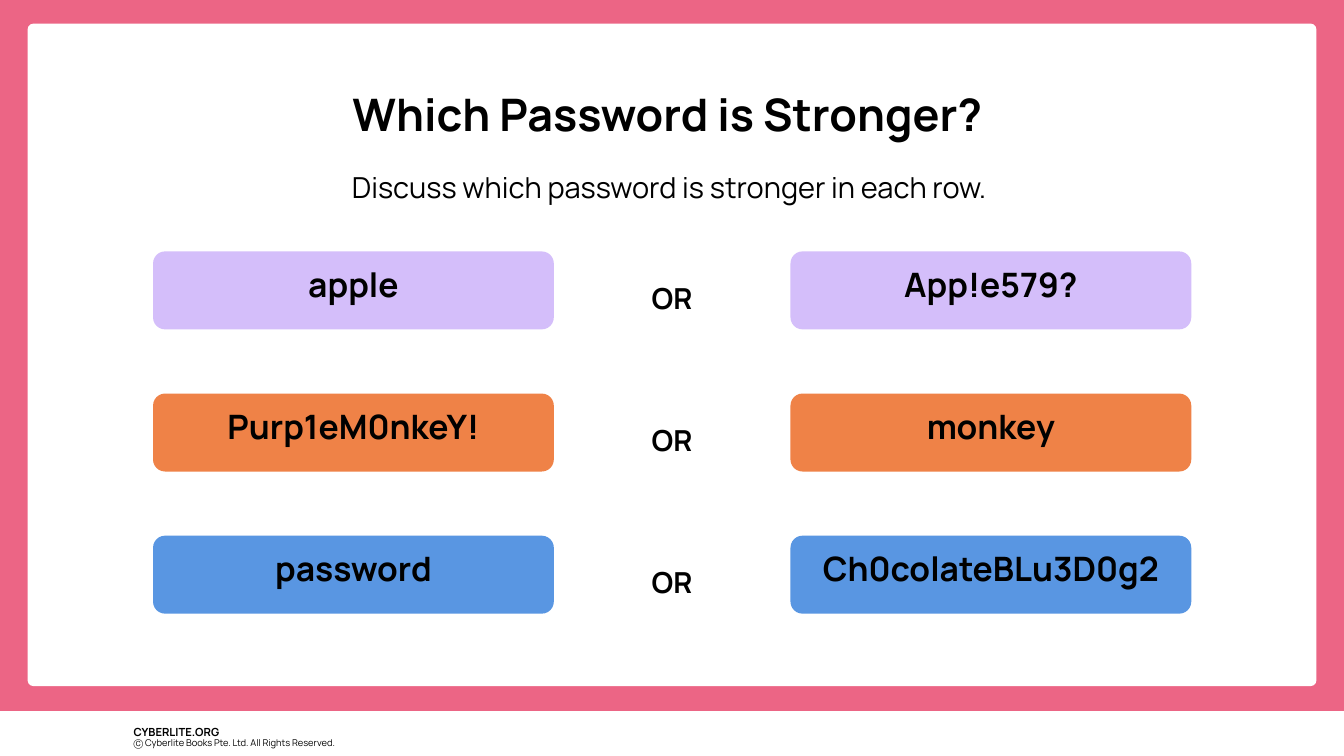
from pptx import Presentation
from pptx.dml.color import RGBColor
from pptx.enum.shapes import MSO_SHAPE as Shape
from pptx.enum.text import MSO_ANCHOR as Anchor, PP_ALIGN as Align
from pptx.util import Pt

PINK = RGBColor(0xEC, 0x65, 0x85)
WHITE = RGBColor(0xFF, 0xFF, 0xFF)
BLACK = RGBColor(0x00, 0x00, 0x00)
LILAC = RGBColor(0xD4, 0xBE, 0xFA)
ORANGE = RGBColor(0xEF, 0x82, 0x47)
BLUE = RGBColor(0x59, 0x96, 0xE2)

FONT = "Manrope"
WIDTH, HEIGHT = 1440, 810
CARD_W, CARD_H = 429.4, 83.5
LEFT, RIGHT = 164, 847
TOP, STEP = 269.4, 152.3
LIFT = 31  # the label box starts this far above its card

ROWS = [
    ("apple", "App!e579?", LILAC),
    ("Purp1eM0nkeY!", "monkey", ORANGE),
    ("password", "Ch0colateBLu3D0g2", BLUE),
]


def add_panel(slide, x, y, w, h, color, radius=0):
    kind = Shape.ROUNDED_RECTANGLE if radius else Shape.RECTANGLE
    panel = slide.shapes.add_shape(kind, Pt(x), Pt(y), Pt(w), Pt(h))
    if radius:
        panel.adjustments[0] = radius / min(w, h)
    panel.shadow.inherit = False
    panel.fill.solid()
    panel.fill.fore_color.rgb = color
    panel.line.fill.background()


def add_text(slide, text, x, y, w, h, size, bold=False,
             align=Align.CENTER, anchor=Anchor.TOP, inset=0):
    box = slide.shapes.add_textbox(Pt(x), Pt(y), Pt(w), Pt(h))
    frame = box.text_frame
    frame.word_wrap = True
    frame.vertical_anchor = anchor
    frame.margin_left = frame.margin_right = Pt(inset)
    frame.margin_top = frame.margin_bottom = Pt(inset)
    para = frame.paragraphs[0]
    para.text = text
    para.alignment = align
    para.line_spacing = 1.4
    font = para.font
    font.name, font.size, font.bold = FONT, Pt(size), bold
    font.color.rgb = BLACK


def add_card(slide, text, x, y, color):
    add_panel(slide, x, y, CARD_W, CARD_H, color, radius=12.8)
    add_text(slide, text, x, y - LIFT, CARD_W, CARD_H + LIFT, 36, True,
             anchor=Anchor.MIDDLE, inset=4)


def add_row(slide, y, first, second, color):
    add_card(slide, first, LEFT, y, color)
    add_text(slide, "OR", 675, y + 16.5, 90, 44, 31, True)
    add_card(slide, second, RIGHT, y, color)


def add_footer(slide):
    add_panel(slide, 0, 762, WIDTH, HEIGHT - 762, WHITE)
    add_text(slide, "CYBERLITE.ORG", 143.3, 771.8, 133, 16.5, 12, True,
             align=Align.LEFT)
    add_text(slide, "Ⓒ Cyberlite Books Pte. Ltd. All Rights Reserved.",
             143.3, 784.8, 333, 12, 10, align=Align.LEFT)


def main():
    deck = Presentation()
    deck.slide_width, deck.slide_height = Pt(WIDTH), Pt(HEIGHT)
    slide = deck.slides.add_slide(deck.slide_layouts[6])
    slide.background.fill.solid()
    slide.background.fill.fore_color.rgb = PINK

    add_footer(slide)
    add_panel(slide, 29.5, 25.2, 1381, 710, WHITE, radius=6.5)
    add_text(slide, "Which Password is Stronger? ",
             147, 69.8, 1146, 68.4, 48, True)
    add_text(slide, "Discuss which password is stronger in each row. ",
             147, 166.3, 1146, 44, 31)
    for i, (first, second, color) in enumerate(ROWS):
        add_row(slide, TOP + i * STEP, first, second, color)

    deck.save("out.pptx")


if __name__ == "__main__":
    main()
